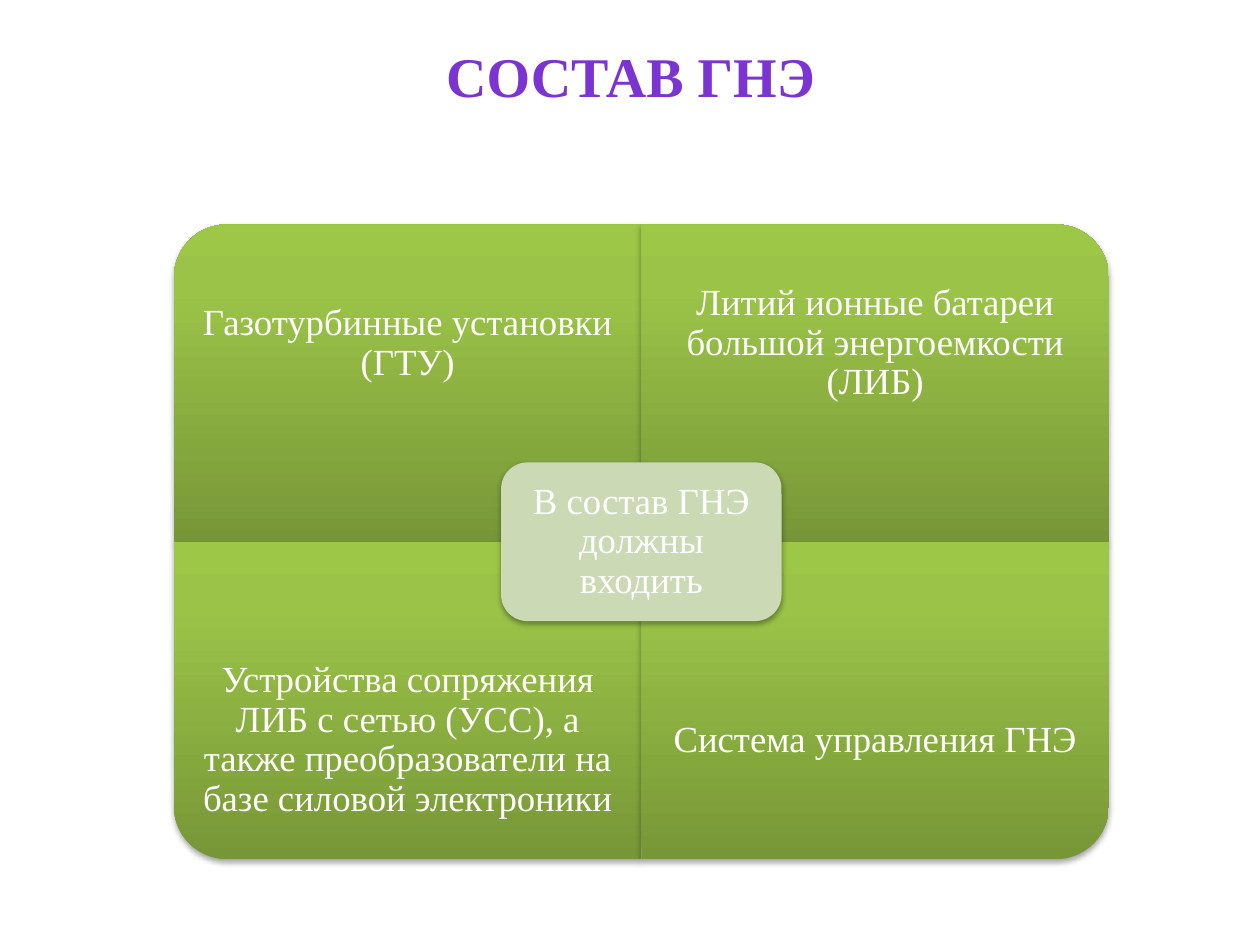
"""Build the slide with four components around a central caption."""
from pptx import Presentation
from pptx import util as u
from pptx.dml import color
from pptx.enum import shapes, text
from pptx.oxml import parse_xml
from pptx.oxml import ns

FONT = "Times New Roman"
TITLE = "СОСТАВ ГНЭ"
CAPTION = "В состав ГНЭ должны входить"
COMPONENTS = [
    ("Газотурбинные установки (ГТУ)", 270),
    ("Литий ионные батареи большой энергоемкости (ЛИБ)", 0),
    ("Устройства сопряжения ЛИБ с сетью (УСС), а также преобразователи на базе силовой электроники", 180),
    ("Система управления ГНЭ", 90),
]
GREENS = [(0, "779737"), (80, "9BC348"), (100, "9DC746")]
LEFT, TOP, CELL_W, CELL_H = 99.4, 128.2, 267.1, 181.4
LABEL_H = CELL_H * 0.75
CAPTION_W, CAPTION_H, CAPTION_PAD = CELL_W * 0.6, CELL_H / 2, 4.4


def rgb(value):
    return color.RGBColor.from_string(value)


def points(*lengths):
    return [u.Pt(length) for length in lengths]


def add_label(slide, words, box, inset=(7.2, 3.6), size=21, tint="FFFFFF",
              bold=False, spacing=0.9, anchor=text.MSO_ANCHOR.MIDDLE):
    frame = slide.shapes.add_textbox(*points(*box)).text_frame
    frame.word_wrap = True
    frame.vertical_anchor = anchor
    frame.margin_left = frame.margin_right = u.Pt(inset[0])
    frame.margin_top = frame.margin_bottom = u.Pt(inset[1])
    paragraph = frame.paragraphs[0]
    paragraph.text = words
    paragraph.alignment = text.PP_ALIGN.CENTER
    paragraph.line_spacing = spacing
    paragraph.font.name = FONT
    paragraph.font.size = u.Pt(size)
    paragraph.font.bold = bold
    paragraph.font.color.rgb = rgb(tint)


def add_panel(slide, kind, box):
    panel = slide.shapes.add_shape(kind, *points(*box))
    panel.line.fill.background()
    panel.shadow.inherit = False
    effects = panel._element.spPr.find(ns.qn("a:effectLst"))
    effects.append(parse_xml(
        f'<a:outerShdw {ns.nsdecls("a")} blurRad="40000" dist="23000" dir="5400000" rotWithShape="0">'
        '<a:srgbClr val="000000"><a:alpha val="35000"/></a:srgbClr></a:outerShdw>'))
    return panel


def fill_green(panel):
    stops = "".join(f'<a:gs pos="{place * 1000}"><a:srgbClr val="{tint}"/></a:gs>'
                    for place, tint in GREENS)
    geometry = panel._element.spPr.find(ns.qn("a:prstGeom"))
    geometry.addnext(parse_xml(
        f'<a:gradFill {ns.nsdecls("a")} rotWithShape="0"><a:gsLst>{stops}</a:gsLst>'
        '<a:lin ang="16200000" scaled="0"/></a:gradFill>'))


def main():
    deck = Presentation()
    deck.slide_width, deck.slide_height = points(720, 540)
    slide = deck.slides.add_slide(deck.slide_layouts[6])
    add_label(slide, TITLE, (14.4, 20.2, 692, 46), size=32, tint="7B34D2",
              bold=True, spacing=1.0, anchor=text.MSO_ANCHOR.TOP)

    for index, (component, turn) in enumerate(COMPONENTS):
        row, column = divmod(index, 2)
        x, y = LEFT + column * CELL_W, TOP + row * CELL_H
        width, height = (CELL_H, CELL_W) if turn % 180 else (CELL_W, CELL_H)
        panel = add_panel(slide, shapes.MSO_SHAPE.ROUND_1_RECTANGLE,
                          (x + (CELL_W - width) / 2, y + (CELL_H - height) / 2, width, height))
        panel.rotation = turn
        fill_green(panel)
        label_y = y + row * (CELL_H - LABEL_H)
        add_label(slide, component, (x, label_y, CELL_W, LABEL_H), inset=(11.5, 11.5))

    x, y = LEFT + CELL_W - CAPTION_W / 2, TOP + CELL_H - CAPTION_H / 2
    plate = add_panel(slide, shapes.MSO_SHAPE.ROUNDED_RECTANGLE, (x, y, CAPTION_W, CAPTION_H))
    plate.fill.solid()
    plate.fill.fore_color.rgb = rgb("CBDAB5")
    add_label(slide, CAPTION, (x + CAPTION_PAD, y + CAPTION_PAD,
                               CAPTION_W - 2 * CAPTION_PAD, CAPTION_H - 2 * CAPTION_PAD),
              inset=(6.5, 6.5))
    deck.save("out.pptx")


if __name__ == "__main__":
    main()
